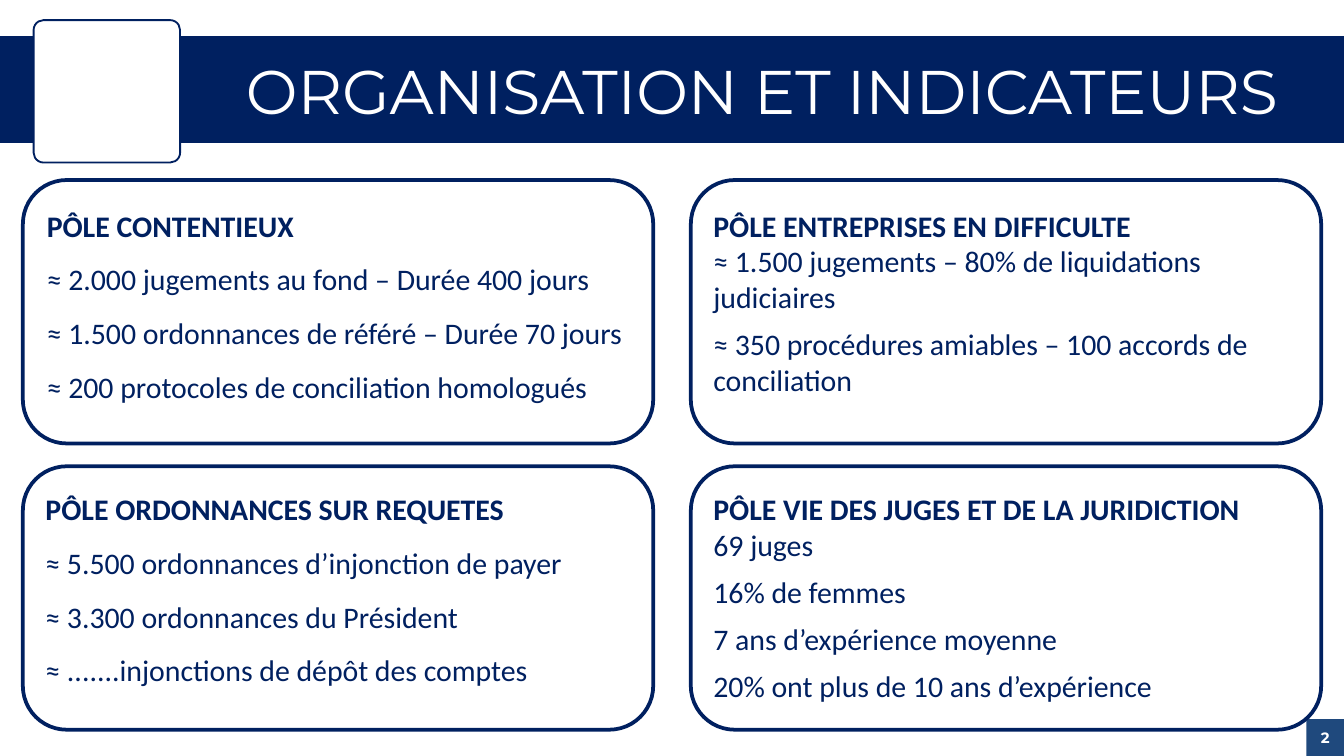
from dataclasses import dataclass

import pptx
import pptx.dml.color
import pptx.enum.shapes
import pptx.enum.text
import pptx.util

Inches = pptx.util.Inches
Pt = pptx.util.Pt
Shapes = pptx.enum.shapes.MSO_SHAPE
Align = pptx.enum.text.PP_ALIGN
Anchor = pptx.enum.text.MSO_ANCHOR
AutoSize = pptx.enum.text.MSO_AUTO_SIZE


@dataclass(frozen=True)
class Theme:
    navy: str = "002060"
    blue: str = "1F497D"
    white: str = "FFFFFF"
    title_font: str = "Montserrat"
    body_font: str = "Calibri"
    title_size: int = 33
    body_size: int = 16
    number_size: int = 8


THEME = Theme()
PAGE_WIDTH = 10
PAGE_HEIGHT = PAGE_WIDTH * 9 / 16
COLUMNS = (0.17, 5.14)
ROWS = (1.34, 3.47)
CARD_SIZE = (4.69, 1.96)
TEXT_WIDTH = 4.56
OPEN_LINES = {"line_spacing": 1.5}
TIGHT_LINES = {"space_after": 6}

CARDS = [
    {
        "cell": (0, 0), "text_at": (0.25, 1.36), "text_height": 1.67,
        "heading": "PÔLE CONTENTIEUX", "spacing": OPEN_LINES,
        "lines": [
            "≈ 2.000 jugements au fond – Durée 400 jours",
            "≈ 1.500 ordonnances de référé – Durée 70 jours",
            "≈ 200 protocoles de conciliation homologués",
        ],
    },
    {
        "cell": (1, 0), "text_at": (5.21, 1.36), "text_height": 2.02,
        "heading": "PÔLE ENTREPRISES EN DIFFICULTE", "spacing": TIGHT_LINES,
        "lines": [
            "≈ 1.500 jugements – 80% de liquidations judiciaires",
            "≈ 350 procédures amiables – 100 accords de conciliation",
        ],
    },
    {
        "cell": (0, 1), "text_at": (0.24, 3.47), "text_height": 1.67,
        "heading": "PÔLE ORDONNANCES SUR REQUETES", "spacing": OPEN_LINES,
        "lines": [
            "≈ 5.500 ordonnances d’injonction de payer",
            "≈ 3.300 ordonnances du Président",
            "≈ .......injonctions de dépôt des comptes",
        ],
    },
    {
        "cell": (1, 1), "text_at": (5.21, 3.47), "text_height": 2.19,
        "heading": "PÔLE VIE DES JUGES ET DE LA JURIDICTION", "spacing": TIGHT_LINES,
        "lines": [
            "69 juges",
            "16% de femmes",
            "7 ans d’expérience moyenne",
            "20% ont plus de 10 ans d’expérience",
        ],
    },
]


def color(value):
    return pptx.dml.color.RGBColor.from_string(value)


def write(para, text, font=THEME.body_font, size=THEME.body_size, ink=THEME.navy,
          bold=False, align=None, line_spacing=None, space_after=None):
    span = para.add_run()
    span.text = text
    span.font.name = font
    span.font.size = Pt(size)
    span.font.bold = bold
    span.font.color.rgb = color(ink)
    para.alignment = align
    para.line_spacing = line_spacing
    if space_after is not None:
        para.space_after = Pt(space_after)


def set_frame(frame, side, edge):
    frame.word_wrap = True
    frame.auto_size = AutoSize.NONE
    frame.vertical_anchor = Anchor.MIDDLE
    frame.margin_left = frame.margin_right = Inches(side)
    frame.margin_top = frame.margin_bottom = Inches(edge)


def add_panel(page, kind, left, top, width, height, fill=None, line=None,
              line_width=1, corner=None):
    panel = page.shapes.add_shape(
        kind, Inches(left), Inches(top), Inches(width), Inches(height))
    panel.shadow.inherit = False
    if corner is not None:
        panel.adjustments[0] = corner
    if fill:
        panel.fill.solid()
        panel.fill.fore_color.rgb = color(fill)
    else:
        panel.fill.background()
    if line:
        panel.line.color.rgb = color(line)
        panel.line.width = Pt(line_width)
    else:
        panel.line.fill.background()
    return panel


def add_header(page):
    add_panel(page, Shapes.RECTANGLE, 0, 0.27, 10.01, 0.79,
              fill=THEME.navy, line=THEME.navy, line_width=0.75)
    add_panel(page, Shapes.ROUNDED_RECTANGLE, 0.25, 0.15, 1.09, 1.06,
              fill=THEME.white, line=THEME.navy, corner=0.07)


def add_page_number(page, number):
    tile = add_panel(page, Shapes.RECTANGLE, 9.72, 5.35, 0.28, 0.28, fill=THEME.blue)
    set_frame(tile.text_frame, side=0, edge=0.04)
    write(tile.text_frame.paragraphs[0], number, font=THEME.title_font,
          size=THEME.number_size, ink=THEME.white, bold=True, align=Align.CENTER)


def place_title(page, text):
    title = page.shapes.title
    title.left, title.top = Inches(1.34), Inches(0.23)
    title.width, title.height = Inches(8.66), Inches(0.94)
    set_frame(title.text_frame, side=0.07, edge=0.04)
    write(title.text_frame.paragraphs[0], text, font=THEME.title_font,
          size=THEME.title_size, ink=THEME.white, align=Align.CENTER, line_spacing=0.9)
    title.element.getparent().append(title.element)


def add_card_outline(page, cell):
    column, row = cell
    add_panel(page, Shapes.ROUNDED_RECTANGLE, COLUMNS[column], ROWS[row], *CARD_SIZE,
              line=THEME.navy, line_width=2)


def add_card_text(page, card):
    left, top = card["text_at"]
    box = page.shapes.add_textbox(Inches(left), Inches(top),
                                  Inches(TEXT_WIDTH), Inches(card["text_height"]))
    frame = box.text_frame
    frame.word_wrap = True
    frame.auto_size = AutoSize.SHAPE_TO_FIT_TEXT
    write(frame.paragraphs[0], card["heading"], bold=True, **OPEN_LINES)
    for line in card["lines"]:
        write(frame.add_paragraph(), line, **card["spacing"])


def main():
    deck = pptx.Presentation()
    deck.slide_width, deck.slide_height = Inches(PAGE_WIDTH), Inches(PAGE_HEIGHT)
    page = deck.slides.add_slide(deck.slide_layouts.get_by_name("Title Only"))
    add_header(page)
    add_page_number(page, "2")
    place_title(page, "ORGANISATION ET INDICATEURS")
    for card in CARDS:
        add_card_outline(page, card["cell"])
    for card in CARDS:
        add_card_text(page, card)
    deck.save("out.pptx")


if __name__ == "__main__":
    main()
